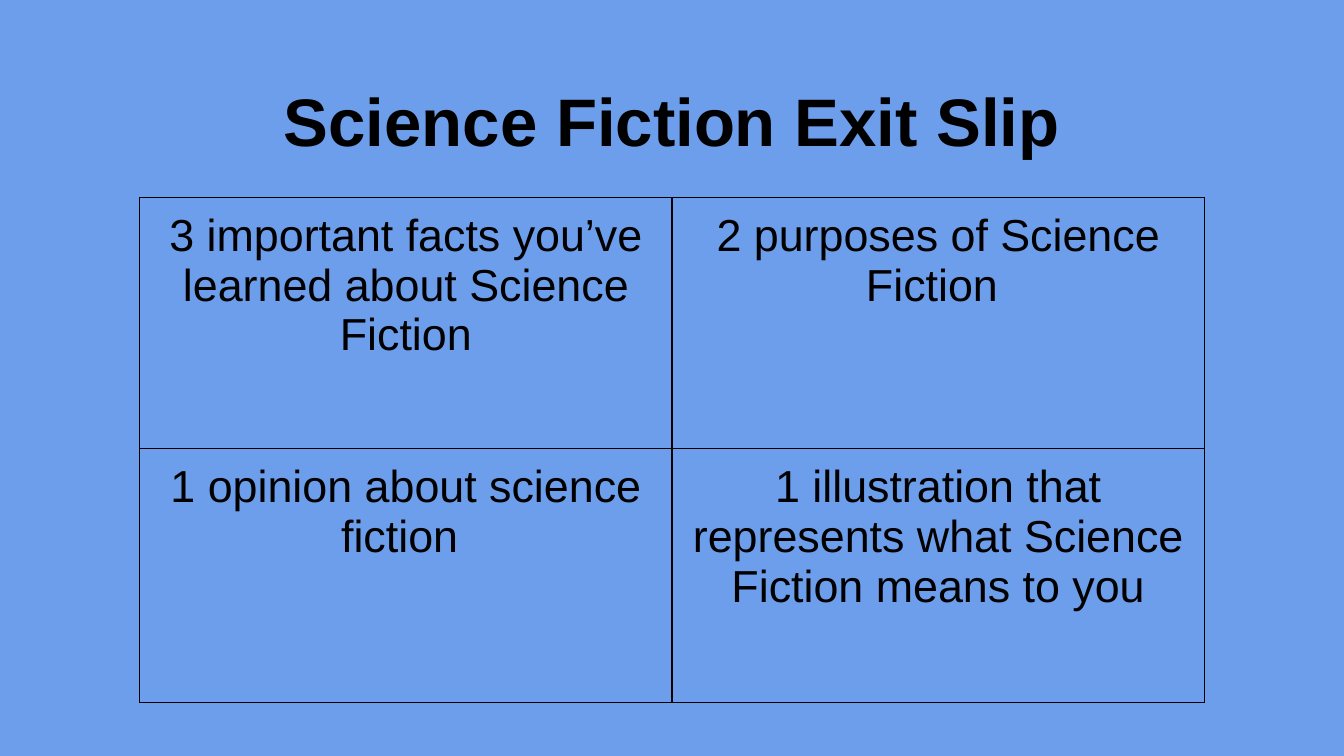
from dataclasses import dataclass

from lxml import etree
from pptx import Presentation
from pptx.dml.color import RGBColor
from pptx.enum.text import MSO_ANCHOR, PP_ALIGN
from pptx.oxml.ns import qn
from pptx.slide import Slide
from pptx.table import _Cell
from pptx.text.text import TextFrame
from pptx.util import Cm, Pt

BLUE = RGBColor(0x6D, 0x9E, 0xEB)
BLACK = RGBColor(0, 0, 0)
CENTER = PP_ALIGN.CENTER
TOP = MSO_ANCHOR.TOP
BOTTOM = MSO_ANCHOR.BOTTOM
FONT = "Arial"
INSET = Cm(0.25)
BORDER = Pt(0.75)
COL_WIDTH = Cm(10.06)


@dataclass
class Row:
    height: Cm
    tasks: tuple[str, str]


ROWS = [
    Row(Cm(4.75), ("3 important facts you’ve learned about Science Fiction",
                   "2 purposes of Science Fiction ")),
    Row(Cm(4.8), ("1 opinion about science fiction ",
                  "1 illustration that represents what Science Fiction means to you")),
]


def write(frame: TextFrame, text: str, size: int, bold: bool = False) -> None:
    para = frame.paragraphs[0]
    para.alignment = CENTER
    run = para.add_run()
    run.text = text
    font = run.font
    font.name, font.size, font.bold = FONT, Pt(size), bold
    font.color.rgb = BLACK


def inset(box: TextFrame | _Cell) -> None:
    box.margin_left = box.margin_right = INSET
    box.margin_top = box.margin_bottom = INSET


def outline(cell: _Cell) -> None:
    """Draw a line on all four sides of the cell."""
    props = cell._tc.get_or_add_tcPr()
    for place, side in enumerate(("lnL", "lnR", "lnT", "lnB")):
        line = etree.Element(qn(f"a:{side}"), w=str(BORDER))
        fill = etree.SubElement(line, qn("a:solidFill"))
        etree.SubElement(fill, qn("a:srgbClr"), val=str(BLACK))
        props.insert(place, line)


def add_title(slide: Slide, text: str) -> None:
    frame = slide.shapes.add_textbox(Cm(1.27), Cm(0.89), Cm(22.86), Cm(2.39)).text_frame
    frame.word_wrap = True
    frame.vertical_anchor = BOTTOM
    inset(frame)
    write(frame, text, 36, bold=True)


def add_grid(slide: Slide, rows: list[Row]) -> None:
    count = len(rows[0].tasks)
    height = sum(row.height for row in rows)
    table = slide.shapes.add_table(len(rows), count, Cm(2.64), Cm(3.73),
                                   COL_WIDTH * count, height).table
    table.first_row = table.horz_banding = False
    for col in table.columns:
        col.width = COL_WIDTH
    for r, row in enumerate(rows):
        table.rows[r].height = row.height
        for c, task in enumerate(row.tasks):
            cell = table.cell(r, c)
            cell.fill.background()
            cell.vertical_anchor = TOP
            inset(cell)
            outline(cell)
            write(cell.text_frame, task, 24)


def main() -> None:
    deck = Presentation()
    deck.slide_width, deck.slide_height = Cm(25.4), Cm(14.29)
    slide = deck.slides.add_slide(deck.slide_layouts[6])
    back = slide.background.fill
    back.solid()
    back.fore_color.rgb = BLUE
    add_title(slide, "Science Fiction Exit Slip")
    add_grid(slide, ROWS)
    deck.save("out.pptx")


if __name__ == "__main__":
    main()
